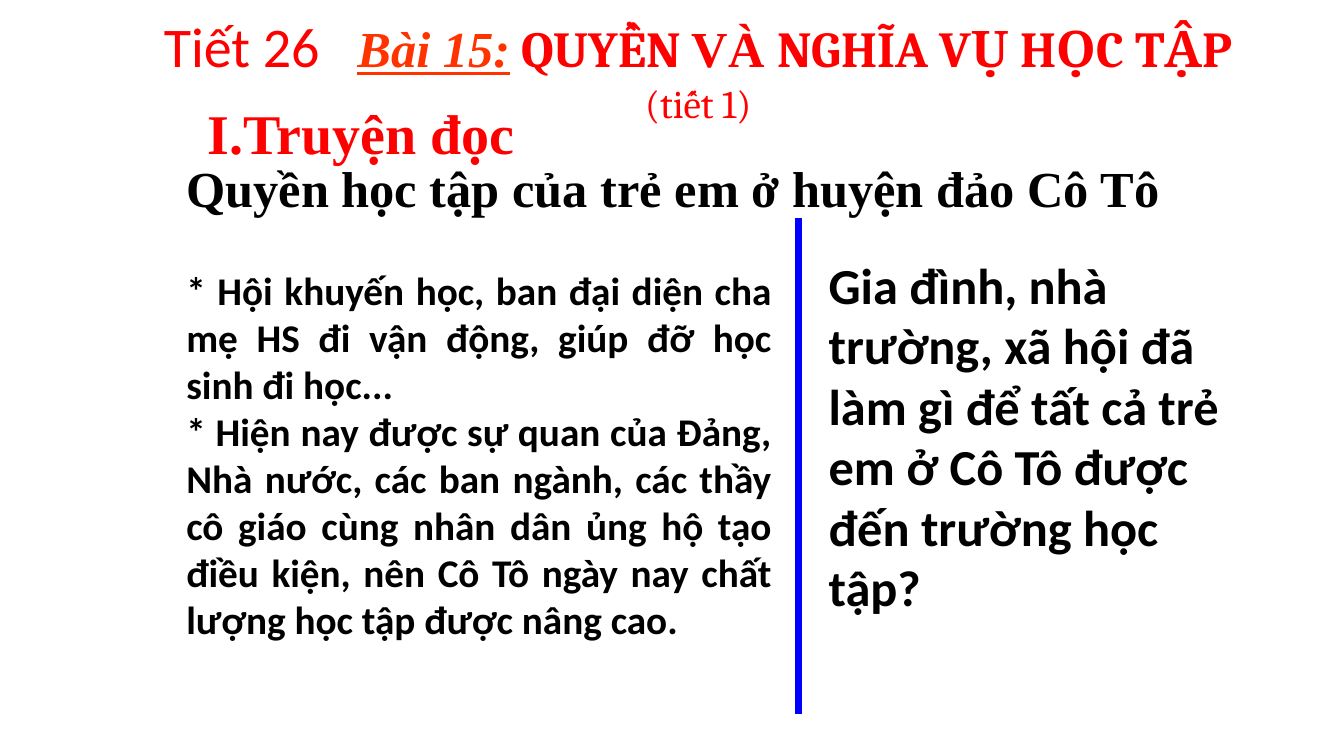
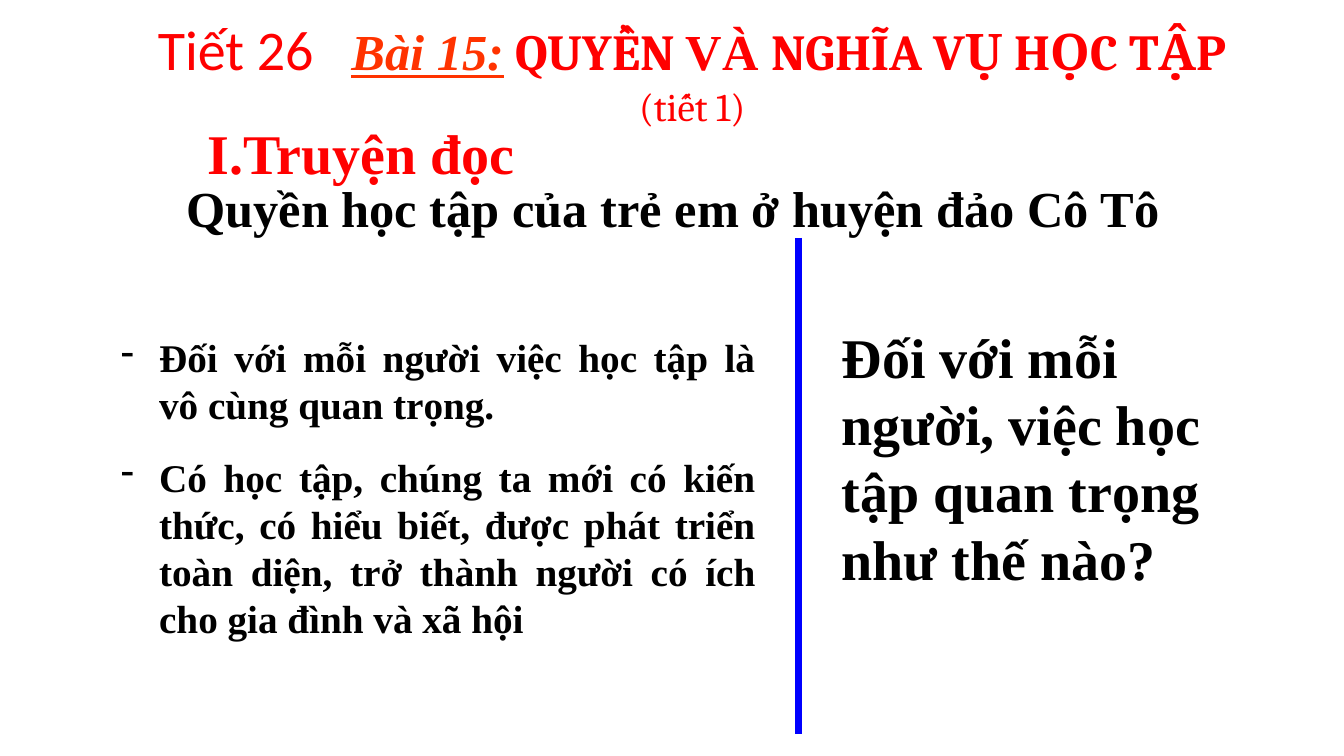
from lxml import etree
from pptx import Presentation
from pptx.dml.color import RGBColor
from pptx.enum.shapes import MSO_CONNECTOR, MSO_SHAPE
from pptx.enum.text import MSO_ANCHOR, MSO_AUTO_SIZE, PP_ALIGN
from pptx.oxml.ns import qn
from pptx.util import Emu, Pt

EMU_PER_PX = 9144  # 100 px to the inch
SLIDE_W, SLIDE_H = 1333, 750

RED = RGBColor(0xFF, 0x00, 0x00)
ORANGE = RGBColor(0xFF, 0x33, 0x00)
BLUE = RGBColor(0x00, 0x00, 0xFF)
BLACK = RGBColor(0x00, 0x00, 0x00)
WHITE = RGBColor(0xFF, 0xFF, 0xFF)

SANS, SERIF, HEADING = "Calibri", "Times New Roman", "Cambria"

RECTANGLE = MSO_SHAPE.RECTANGLE
STRAIGHT = MSO_CONNECTOR.STRAIGHT
LEFT, CENTER, JUSTIFY = PP_ALIGN.LEFT, PP_ALIGN.CENTER, PP_ALIGN.JUSTIFY
MIDDLE = MSO_ANCHOR.MIDDLE
FIT_SHAPE, NO_FIT = MSO_AUTO_SIZE.SHAPE_TO_FIT_TEXT, MSO_AUTO_SIZE.NONE

TITLE_SIZE = (1199, 91)
SECTION = "I.Truyện đọc"
STORY = "Quyền học tập của trẻ em ở huyện đảo Cô Tô"
# text, font, size, colour, bold, emphasised (italic and underlined)
LESSON_TITLE = [
    ("Tiết 26", SANS, 40, RED, False, False),
    (" ", SANS, 40, RED, False, False),
    ("Bài 15:", SERIF, 36, ORANGE, True, True),
    (" QUYỀN ", HEADING, 36, RED, True, False),
    ("VÀ ", SERIF, 36, RED, True, False),
    ("NGHĨA VỤ HỌC TẬP", HEADING, 36, RED, True, False),
]
TITLE_GAP_RUN, TITLE_GAP_PT = 1, 18


def px(*lengths):
    return [Emu(length * EMU_PER_PX) for length in lengths]


def style_run(run, font, size, color, bold=True, emphasised=False):
    run.font.name = font
    run.font.size = Pt(size)
    run.font.color.rgb = color
    run.font.bold = bold
    run.font.italic = emphasised
    run.font.underline = emphasised


def add_dash(paragraph, indent=38):
    """Give the paragraph a hanging dash and space above it."""
    paragraph.space_before = Pt(18)
    properties = paragraph._p.get_or_add_pPr()
    hang = indent * EMU_PER_PX
    properties.set("marL", str(hang))
    properties.set("indent", str(-hang))
    etree.SubElement(properties, qn("a:buChar")).set("char", "-")


def add_text(slide, box, paragraphs, font, size, color=BLACK, align=LEFT,
             dashed=False):
    frame = slide.shapes.add_textbox(*px(*box)).text_frame
    frame.word_wrap = True
    frame.auto_size = FIT_SHAPE
    frame.text = "\n".join(paragraphs)
    for paragraph in frame.paragraphs:
        paragraph.alignment = align
        style_run(paragraph.runs[0], font, size, color)
        if dashed:
            add_dash(paragraph)


def add_divider(slide, x, top, height):
    divider = slide.shapes.add_connector(STRAIGHT, *px(x, top, x, top + height))
    divider.line.color.rgb = BLUE
    divider.line.width = Pt(4.5)
    etree.SubElement(divider._element.spPr, qn("a:effectLst"))


def add_lesson_title(slide, left, top):
    band = slide.shapes.add_shape(RECTANGLE, *px(left, top, *TITLE_SIZE))
    band.shadow.inherit = False
    band.fill.solid()
    band.fill.fore_color.rgb = WHITE
    band.line.fill.background()

    frame = band.text_frame
    frame.word_wrap = False
    frame.auto_size = NO_FIT
    frame.vertical_anchor = MIDDLE
    heading, part = frame.paragraphs[0], frame.add_paragraph()
    heading.alignment = part.alignment = CENTER
    for text, *style in LESSON_TITLE:
        run = heading.add_run()
        run.text = text
        style_run(run, *style)
    gap = heading.runs[TITLE_GAP_RUN]
    gap.font._element.set("spc", str(TITLE_GAP_PT * 100))
    part.text = "(tiết 1)"
    style_run(part.runs[0], HEADING, 28, RED, bold=False)


def add_lesson_slide(deck, title_at, header_top, answer, question):
    """Add a slide with answers left of the divider and the question right."""
    slide = deck.slides.add_slide(deck.slide_layouts[6])
    add_text(slide, (175, header_top + 58, 992, 71), [STORY], SERIF, 36)
    add_divider(slide, 792, header_top + 123, 492)
    add_text(slide, **question)
    add_text(slide, align=JUSTIFY, **answer)
    add_text(slide, (196, header_top, 446, 77), [SECTION], SERIF, 40, RED)
    add_lesson_title(slide, *title_at)


def main():
    deck = Presentation()
    deck.slide_width, deck.slide_height = px(SLIDE_W, SLIDE_H)

    add_lesson_slide(
        deck, title_at=(93, 23), header_top=93,
        answer=dict(box=(175, 259, 600, 434), font=SANS, size=28, paragraphs=[
            "* Hội khuyến học, ban đại diện cha mẹ HS đi vận động, giúp đỡ "
            "học sinh đi học...",
            "* Hiện nay được sự quan của Đảng, Nhà nước, các ban ngành, các "
            "thầy cô giáo cùng nhân dân ủng hộ tạo điều kiện, nên Cô Tô ngày "
            "nay chất lượng học tập được nâng cao.",
        ]),
        question=dict(box=(812, 247, 430, 374), font=SANS, size=36, paragraphs=[
            "Gia đình, nhà trường, xã hội đã làm gì để tất cả trẻ em ở Cô Tô "
            "được đến trường học tập?",
        ]),
    )
    add_lesson_slide(
        deck, title_at=(87, 26), header_top=113,
        answer=dict(box=(110, 326, 649, 318), font=SERIF, size=28, dashed=True,
                    paragraphs=[
            "Đối với mỗi người việc học tập là vô cùng quan trọng.",
            "Có học tập, chúng ta mới có kiến thức, có hiểu biết, được phát "
            "triển toàn diện, trở thành người có ích cho gia đình và xã hội",
        ]),
        question=dict(box=(825, 315, 430, 279), font=SERIF, size=40, paragraphs=[
            "Đối với mỗi người, việc học tập quan trọng như thế nào?",
        ]),
    )
    deck.save("out.pptx")


if __name__ == "__main__":
    main()
